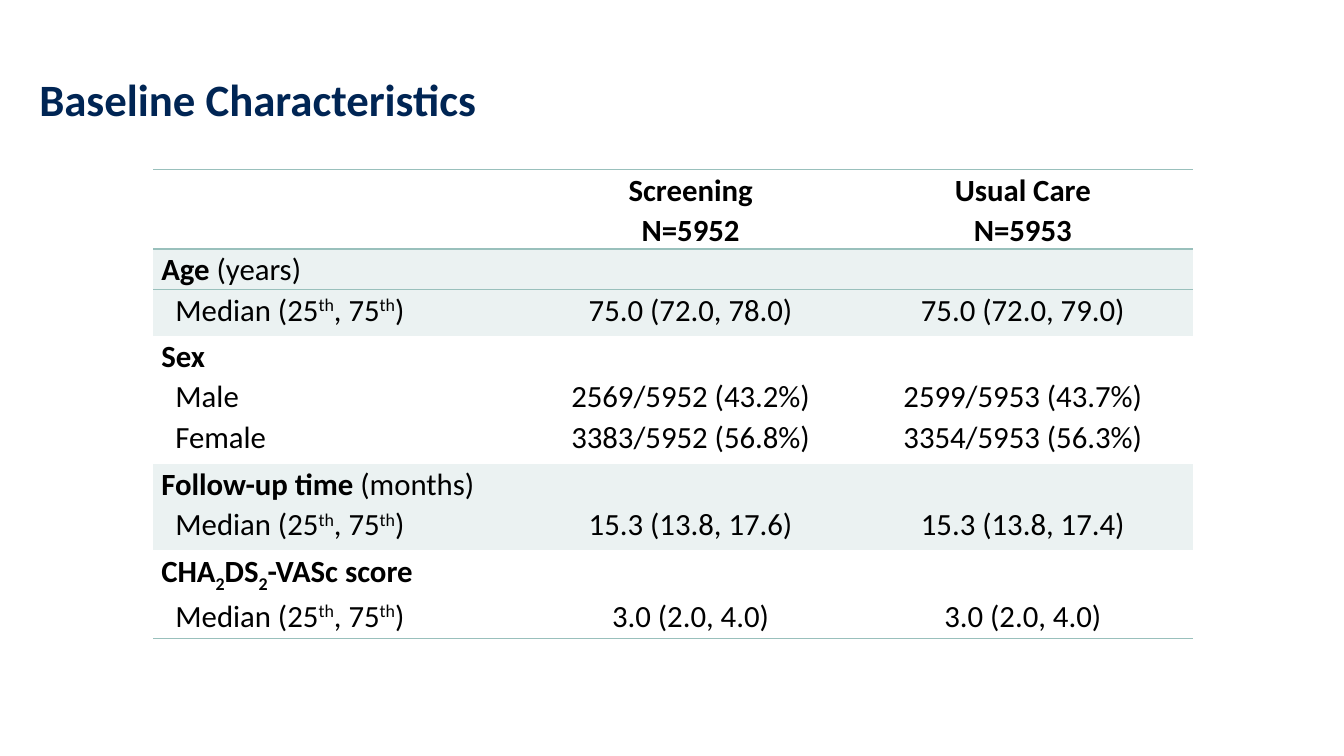
from dataclasses import dataclass

from lxml.etree import SubElement
from pptx import Presentation
from pptx.dml.color import RGBColor
from pptx.enum.text import MSO_ANCHOR, PP_ALIGN
from pptx.oxml import parse_xml
from pptx.oxml.ns import nsdecls, qn
from pptx.util import Inches, Pt

NAVY, BLACK, WHITE, MINT, RULE = "002554", "000000", "FFFFFF", "EBF2F2", "99C0BC"
PLAIN_STYLE = "{2D5ABB26-0587-4C30-8999-92F81FD0307C}"


@dataclass
class Run:
    text: str
    bold: bool = False
    base: int = 0


@dataclass
class Row:
    label: list[Run]
    height: float
    fill: str
    values: tuple[str, str] = ("", "")
    indent: bool = False
    head: bool = False
    rules: str = ""


MEDIAN = [Run("Median (25"), Run("th", base=30), Run(", 75"), Run("th", base=30), Run(")")]
SCORE = [Run("CHA", True), Run("2", True, -25), Run("DS", True), Run("2", True, -25),
         Run("-VASc score", True)]
ROWS = [
    Row([], 0.79, WHITE, ("Screening\nN=5952", "Usual Care\nN=5953"), head=True, rules="TB"),
    Row([Run("Age ", True), Run("(years)")], 0.4, MINT, rules="T"),
    Row(MEDIAN, 0.46, MINT, ("75.0 (72.0, 78.0)", "75.0 (72.0, 79.0)"), indent=True),
    Row([Run("Sex", True)], 0.4, WHITE),
    Row([Run("Male")], 0.4, WHITE, ("2569/5952 (43.2%)", "2599/5953 (43.7%)"), indent=True),
    Row([Run("Female")], 0.47, WHITE, ("3383/5952 (56.8%)", "3354/5953 (56.3%)"), indent=True),
    Row([Run("Follow-up time", True), Run(" (months)")], 0.4, MINT),
    Row(MEDIAN, 0.46, MINT, ("15.3 (13.8, 17.6)", "15.3 (13.8, 17.4)"), indent=True),
    Row(SCORE, 0.43, WHITE),
    Row(MEDIAN, 0.43, WHITE, ("3.0 (2.0, 4.0)", "3.0 (2.0, 4.0)"), indent=True, rules="B"),
]
WIDTHS = [3.72, 3.22, 3.37]


def color(code: str) -> RGBColor:
    return RGBColor.from_string(code)


def write(par, text: str, *, size: float = 22, bold: bool = False,
          tint: str = BLACK, base: int = 0) -> None:
    """Add text to a paragraph; base raises or lowers it by a percentage."""
    for i, line in enumerate(text.split("\n")):
        if i:
            par.add_line_break()
        run = par.add_run()
        run.text = line
        font = run.font
        font.name, font.size, font.bold = "Calibri", Pt(size), bold
        font.color.rgb = color(tint)
        if base:
            run._r.get_or_add_rPr().set("baseline", str(base * 1000))


def rule(cell, sides: str) -> None:
    """Draw thin lines on the given sides, T or B, of a cell."""
    for i, side in enumerate(sides):
        line = parse_xml(f'<a:ln{side} {nsdecls("a")} w="12700"/>')
        fill = SubElement(line, qn("a:solidFill"))
        SubElement(fill, qn("a:srgbClr"), val=RULE)
        cell._tc.get_or_add_tcPr().insert(i, line)


def fill_cell(cell, row: Row, col: int) -> None:
    cell.fill.solid()
    cell.fill.fore_color.rgb = color(row.fill)
    cell.margin_left = cell.margin_right = Inches(0.08)
    cell.margin_top = cell.margin_bottom = 0
    cell.vertical_anchor = MSO_ANCHOR.BOTTOM if row.head else MSO_ANCHOR.TOP
    rule(cell, row.rules)
    par = cell.text_frame.paragraphs[0]
    par.line_spacing = 1.07
    if col:
        par.alignment = PP_ALIGN.CENTER
        runs = [Run(row.values[col - 1], row.head)] if row.values[col - 1] else []
    else:
        runs = row.label
        if row.indent:
            par._p.get_or_add_pPr().set("marL", str(Inches(0.14)))
    for run in runs:
        write(par, run.text, bold=run.bold, base=run.base)


def add_title(slide) -> None:
    box = slide.shapes.add_textbox(Inches(0.39), Inches(0.4), Inches(12.56), Inches(0.85))
    frame = box.text_frame
    frame.word_wrap = True
    frame.vertical_anchor = MSO_ANCHOR.BOTTOM
    frame.margin_left = frame.margin_right = frame.margin_top = frame.margin_bottom = 0
    par = frame.paragraphs[0]
    par.line_spacing = 0.9
    write(par, "Baseline Characteristics", size=32, bold=True, tint=NAVY)


def add_grid(slide) -> None:
    high = sum(row.height for row in ROWS)
    table = slide.shapes.add_table(len(ROWS), len(WIDTHS), Inches(1.52), Inches(1.68),
                                   Inches(sum(WIDTHS)), Inches(high)).table
    table.first_row = table.horz_banding = False
    table._tbl.tblPr.find(qn("a:tableStyleId")).text = PLAIN_STYLE
    for col, width in enumerate(WIDTHS):
        table.columns[col].width = Inches(width)
    for i, row in enumerate(ROWS):
        table.rows[i].height = Inches(row.height)
        for col in range(len(WIDTHS)):
            fill_cell(table.cell(i, col), row, col)


def main() -> None:
    deck = Presentation()
    deck.slide_width, deck.slide_height = Inches(13.33), Inches(7.5)
    slide = deck.slides.add_slide(deck.slide_layouts[6])
    add_title(slide)
    add_grid(slide)
    deck.save("out.pptx")


if __name__ == "__main__":
    main()
